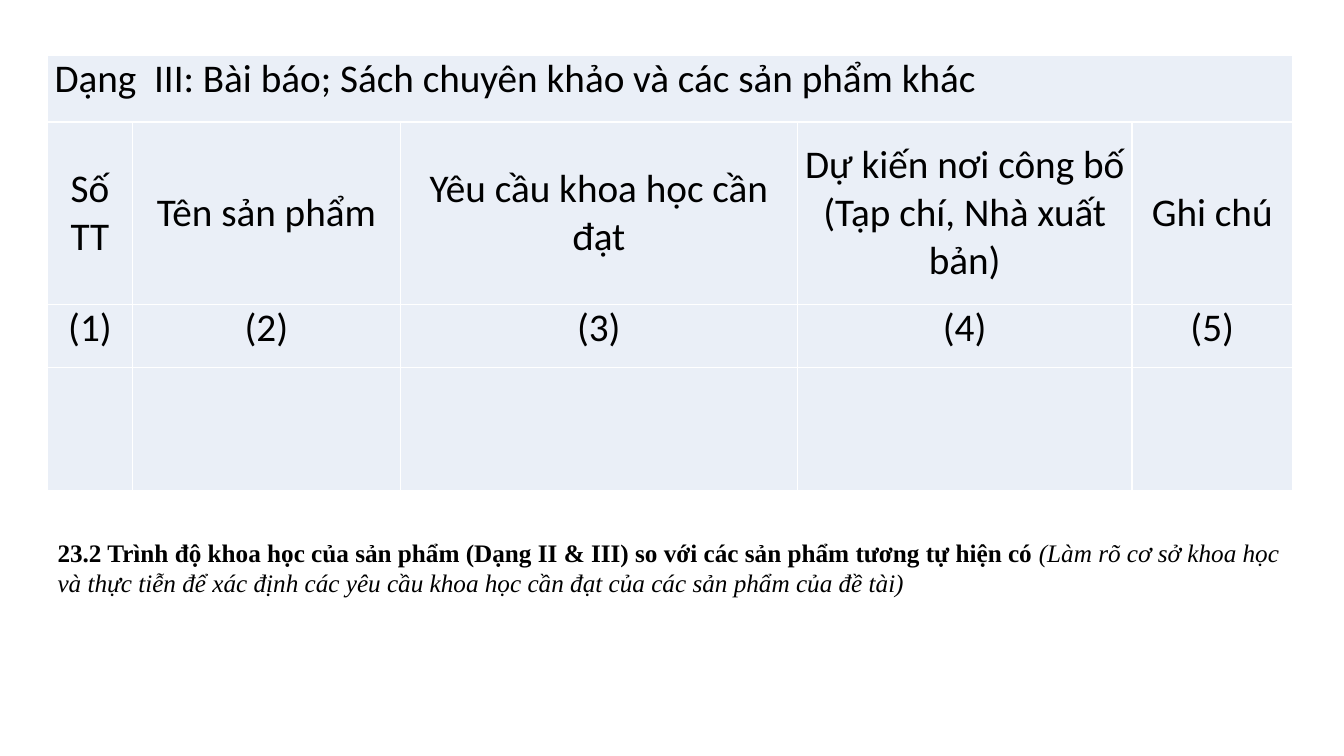
from lxml import etree
from pptx import Presentation
from pptx.dml.color import RGBColor
from pptx.enum.text import MSO_ANCHOR, MSO_AUTO_SIZE, PP_ALIGN
from pptx.oxml.ns import qn
from pptx.util import Pt

LEFT, CENTER = PP_ALIGN.LEFT, PP_ALIGN.CENTER
TOP, MIDDLE = MSO_ANCHOR.TOP, MSO_ANCHOR.MIDDLE
GROW = MSO_AUTO_SIZE.SHAPE_TO_FIT_TEXT

COLORS = {"text": "000000", "cell": "EAEFF7", "border": "FFFFFF"}
TABLE_FONT = {"name": "Calibri", "size": Pt(28)}
NOTE_FONT = {"name": "Times New Roman", "size": Pt(18)}
CELL_MARGINS = {"margin_left": Pt(5), "margin_right": Pt(5),
                "margin_top": 0, "margin_bottom": 0}
SPACING = {"space_before": Pt(3), "space_after": Pt(3)}


def set_all(target, values):
    for name, value in values.items():
        setattr(target, name, value)


class SlideBuilder:
    def __init__(self, slide, colors):
        self.slide = slide
        self.colors = colors

    def paragraph(self, p, runs, font, align=LEFT):
        set_all(p, {"alignment": align, **SPACING})
        for text, extra in runs:
            r = p.add_run()
            r.text = text
            set_all(r.font, {**font, **extra})
            r.font.color.rgb = RGBColor.from_string(self.colors["text"])

    def borders(self, cell):
        tc_pr = cell._tc.get_or_add_tcPr()
        for i, side in enumerate(("lnL", "lnR", "lnT", "lnB")):
            line = etree.Element(qn(f"a:{side}"), w=str(Pt(1)))
            fill = etree.SubElement(line, qn("a:solidFill"))
            etree.SubElement(fill, qn("a:srgbClr"), val=self.colors["border"])
            tc_pr.insert(i, line)

    def table(self, left, top, widths, heights):
        table = self.slide.shapes.add_table(
            len(heights), len(widths), Pt(left), Pt(top),
            Pt(sum(widths)), Pt(sum(heights))).table
        for column, width in zip(table.columns, widths):
            column.width = Pt(width)
        for row, height in zip(table.rows, heights):
            row.height = Pt(height)
        set_all(table, {"first_row": False, "horz_banding": False})
        for cell in table.iter_cells():
            set_all(cell, CELL_MARGINS)
            cell.fill.solid()
            cell.fill.fore_color.rgb = RGBColor.from_string(self.colors["cell"])
            self.borders(cell)
        return table

    def cell_text(self, cell, text, align=CENTER, anchor=TOP):
        cell.vertical_anchor = anchor
        self.paragraph(cell.text_frame.paragraphs[0], [(text, {})], TABLE_FONT, align)

    def text_box(self, left, top, width, height, runs, font):
        tf = self.slide.shapes.add_textbox(
            Pt(left), Pt(top), Pt(width), Pt(height)).text_frame
        set_all(tf, {"word_wrap": True, "auto_size": GROW})
        self.paragraph(tf.paragraphs[0], runs, font)


def main():
    prs = Presentation()
    set_all(prs, {"slide_width": Pt(960), "slide_height": Pt(540)})
    s = SlideBuilder(prs.slides.add_slide(prs.slide_layouts[6]), COLORS)

    # Product table: heading row, column names, column numbers, empty row
    widths = [60.5, 191.5, 283.5, 239.2, 114.5]
    table = s.table(34, 39.6, widths, [47.5, 130.3, 45.4, 87.8])
    heading = table.cell(0, 0)
    heading.merge(table.cell(0, len(widths) - 1))
    s.cell_text(heading, "Dạng  III: Bài báo; Sách chuyên khảo và các sản phẩm khác", LEFT)
    names = ["Số TT", "Tên sản phẩm", "Yêu cầu khoa học cần đạt",
             "Dự kiến nơi công bố (Tạp chí, Nhà xuất bản)", "Ghi chú"]
    for col, name in enumerate(names):
        s.cell_text(table.cell(1, col), name, anchor=MIDDLE)
        s.cell_text(table.cell(2, col), f"({col + 1})")

    # Note below the table
    s.text_box(34, 380.2, sum(widths), 51, [
        ("23.2 Trình độ khoa học của sản phẩm (Dạng II & III) "
         "so với các sản phẩm tương tự hiện có ", {"bold": True}),
        ("(Làm rõ cơ sở khoa học và thực tiễn để xác định các yêu cầu "
         "khoa học cần đạt của các sản phẩm của đề tài)", {"italic": True}),
    ], NOTE_FONT)

    prs.save("out.pptx")


if __name__ == "__main__":
    main()
